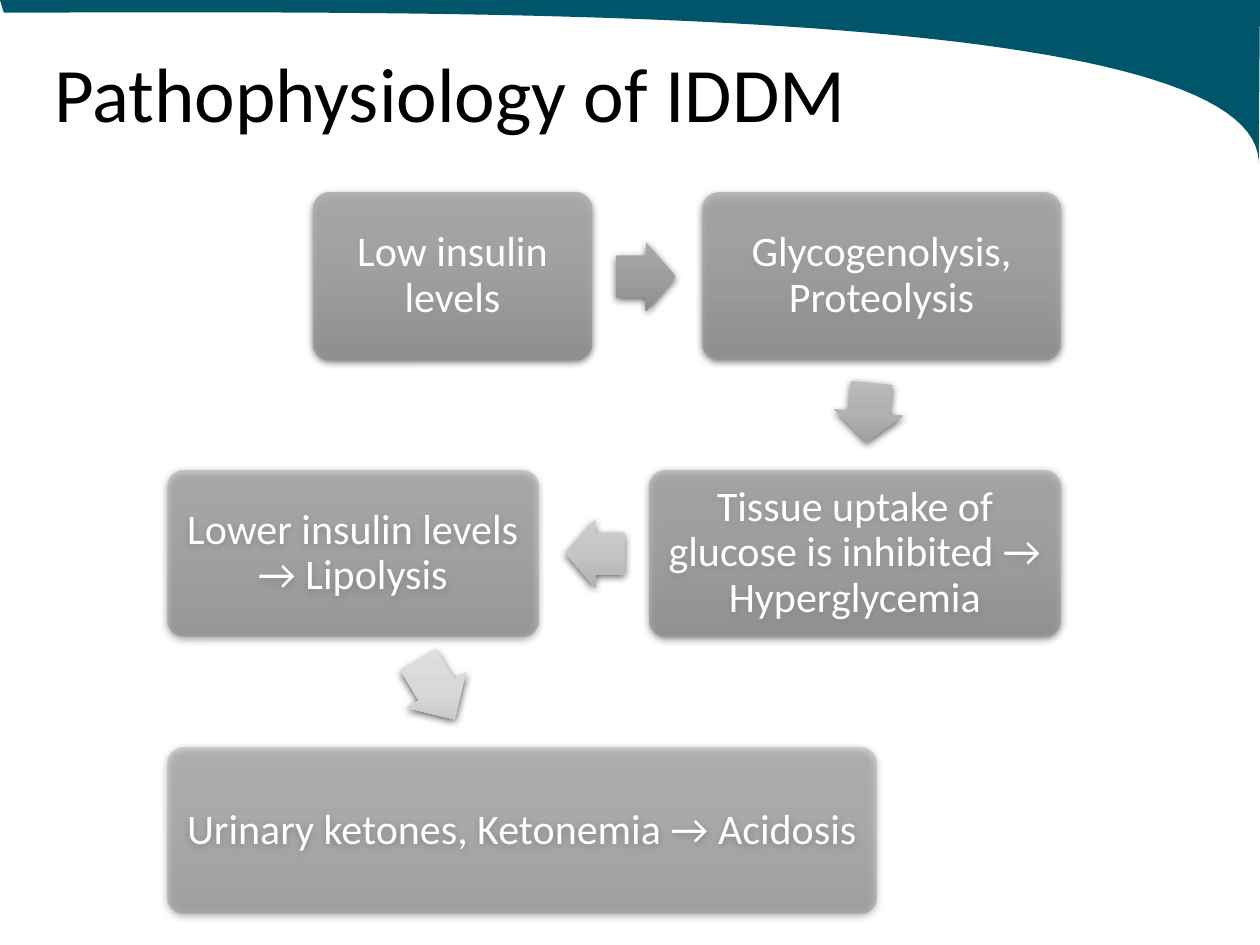
from pptx import Presentation
from pptx.dml.color import RGBColor
from pptx.enum.shapes import MSO_SHAPE as Preset
from pptx.enum.text import MSO_ANCHOR as Anchor, PP_ALIGN as Align
from pptx.oxml import parse_xml
from pptx.oxml.ns import nsdecls, qn
from pptx.util import Pt

PAGE_WIDTH, PAGE_HEIGHT = 720, 540
ROW_TOP, ROW_STEP, ROW_HEIGHT = 110.2, 158.4, 95
STEP_COLORS = ("AFAFAF", "A5A5A5", "939393")
STEPS = [
    ("Low insulin levels", 0, 179.3, 158.6),
    ("Glycogenolysis, Proteolysis", 0, 401.3, 204.8),
    ("Tissue uptake of glucose is inhibited → Hyperglycemia", 1, 370.9, 235.2),
    ("Lower insulin levels → Lipolysis", 1, 95.8, 211.7),
    ("Urinary ketones, Ketonemia → Acidosis", 2, 95.8, 404.8),
]
ARROWS = [
    ((352.1, 138.2, 33.9, 39.6), 0, ("A8A8A8", "9E9E9E", "8C8C8C")),
    ((479.5, 216, 33.9, 39.6), 95.5, ("BABABA", "B1B1B1", "9E9E9E")),
    ((323.3, 296.6, 33.9, 39.6), 180, ("CDCDCD", "C5C5C5", "AFAFAF")),
    ((229.7, 374.4, 39.6, 39.6), 58.6, ("DFDFDF", "D9D9D9", "C0C0C0")),
]


def color(value):
    """Turn a hex string into a colour."""
    return RGBColor.from_string(value)


def set_format(target, values):
    """Set each attribute of the target from a dict."""
    for name, value in values.items():
        setattr(target, name, value)


def place(shape, box):
    """Move and size a shape to a box in points."""
    names = ("left", "top", "width", "height")
    set_format(shape, dict(zip(names, map(Pt, box))))


def write_text(frame, text, size, ink, align):
    """Write one middle-anchored paragraph into a text frame."""
    set_format(frame, {"text": text, "word_wrap": True, "vertical_anchor": Anchor.MIDDLE})
    para = frame.paragraphs[0]
    set_format(para, {"alignment": align, "line_spacing": 0.9})
    set_format(para.font, {"name": "Calibri", "size": Pt(size)})
    para.font.color.rgb = color(ink)


def add_shaded(page, preset, box, adjustments, colors, opacity=100):
    """Add a preset shape with a vertical gradient and a soft shadow."""
    shape = page.shapes.add_shape(preset, *map(Pt, box))
    for index, value in enumerate(adjustments):
        shape.adjustments[index] = value
    shape.line.fill.background()
    stops = "".join(
        f'<a:gs pos="{index * 50000}"><a:srgbClr val="{value}">'
        f'<a:alpha val="{opacity * 1000}"/></a:srgbClr></a:gs>'
        for index, value in enumerate(colors)
    )
    outline = shape._element.spPr.find(qn("a:ln"))
    outline.addprevious(parse_xml(
        f'<a:gradFill {nsdecls("a")} rotWithShape="0"><a:gsLst>{stops}</a:gsLst>'
        '<a:lin ang="5400000" scaled="0"/></a:gradFill>'
    ))
    outline.addnext(parse_xml(
        f'<a:effectLst {nsdecls("a")}><a:outerShdw blurRad="{Pt(4.5)}" dist="{Pt(1.5)}" '
        'dir="5400000" algn="ctr" rotWithShape="0"><a:srgbClr val="000000">'
        '<a:alpha val="63000"/></a:srgbClr></a:outerShdw></a:effectLst>'
    ))
    return shape


def curve_points(start, first, second, end, count=60):
    """List points along a cubic curve."""
    points = []
    for index in range(count + 1):
        t = index / count
        weights = ((1 - t) ** 3, 3 * t * (1 - t) ** 2, 3 * t * t * (1 - t), t ** 3)
        points.append(tuple(
            Pt(sum(weight * value for weight, value in zip(weights, axis)))
            for axis in zip(start, first, second, end)
        ))
    return points


def add_swoosh(page, width, height):
    """Add the curved band across the top, behind everything else."""
    edge = curve_points((width - 0.7, height), (width - 1.4, 0), (242, 7.2), (2.2, 7.2))
    builder = page.shapes.build_freeform(0, 0, scale=1.0)
    builder.add_line_segments([(Pt(width), 0), *edge], close=True)
    band = builder.convert_to_shape()
    band.shadow.inherit = False
    band.fill.solid()
    band.fill.fore_color.rgb = color("00556A")
    band.line.fill.background()
    page.shapes.title._element.addprevious(band._element)


def add_title(page, box):
    """Fill and place the title placeholder."""
    title = page.shapes.title
    place(title, box)
    write_text(title.text_frame, "Pathophysiology of IDDM", 44, "000000", Align.LEFT)


def add_step(page, box, text, opacity):
    """Add one rounded step of the flow."""
    step = add_shaded(page, Preset.ROUNDED_RECTANGLE, box, [0.1], STEP_COLORS, opacity)
    sides = ("left", "top", "right", "bottom")
    set_format(step.text_frame, {f"margin_{side}": Pt(7.2) for side in sides})
    write_text(step.text_frame, text, 24, "FFFFFF", Align.CENTER)


def add_flow(page, top, row_step, row_height):
    """Add the steps, each fainter than the last, and the arrows between them."""
    for index, (text, row, left, width) in enumerate(STEPS):
        box = (left, top + row * row_step, width, row_height)
        add_step(page, box, text, 90 - 10 * index)
    for box, angle, colors in ARROWS:
        arrow = add_shaded(page, Preset.RIGHT_ARROW, box, [0.6, 0.5], colors)
        arrow.rotation = angle


def main():
    """Build and save the deck."""
    deck = Presentation()
    set_format(deck, {"slide_width": Pt(PAGE_WIDTH), "slide_height": Pt(PAGE_HEIGHT)})
    page = deck.slides.add_slide(deck.slide_layouts[5])
    add_swoosh(page, PAGE_WIDTH, 92.9)
    add_title(page, (23.8, 3.6, 620.6, 104.4))
    add_flow(page, ROW_TOP, ROW_STEP, ROW_HEIGHT)
    deck.save("out.pptx")


if __name__ == "__main__":
    main()
